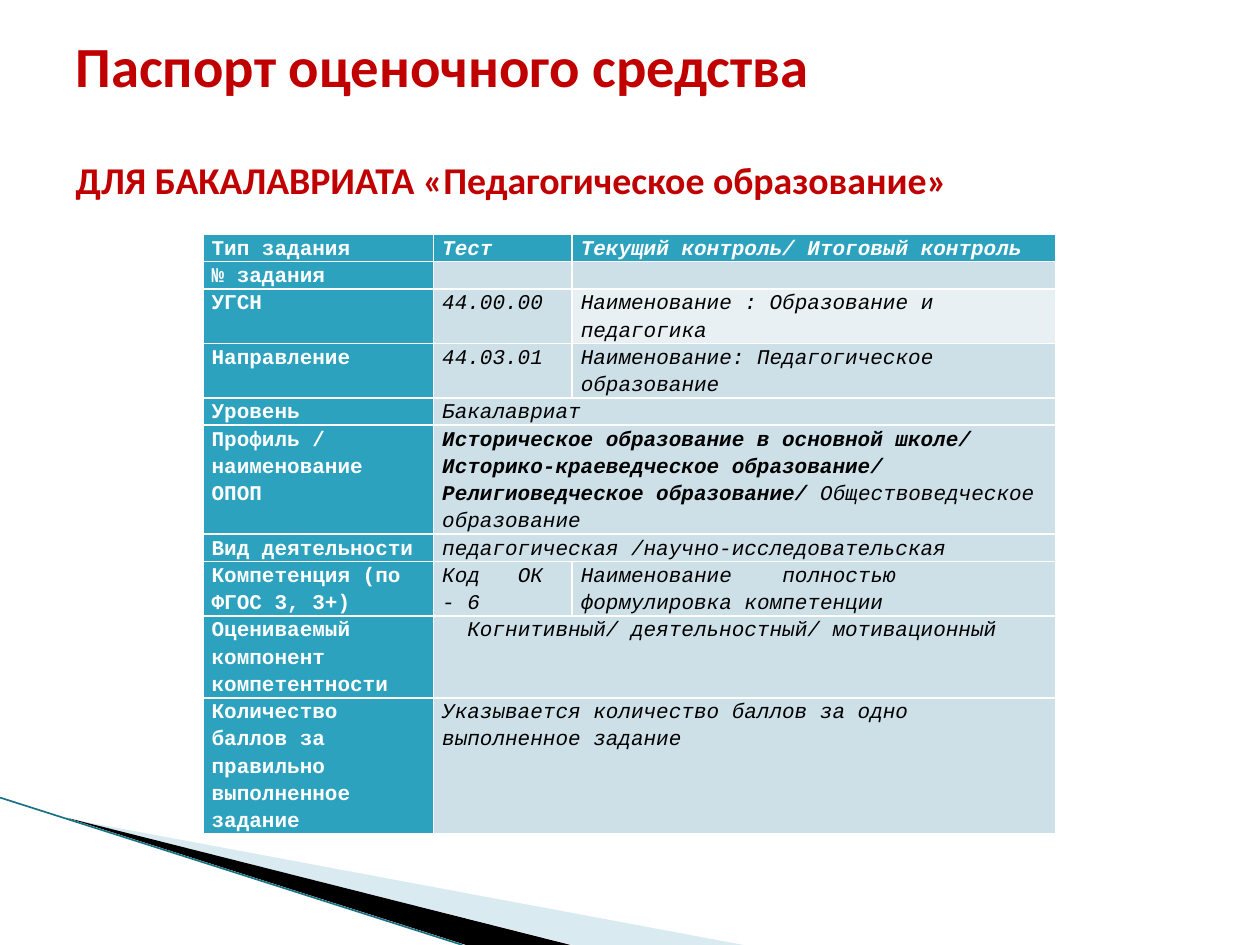
import pptx
import pptx.dml.color
import pptx.enum.shapes
import pptx.enum.text
import pptx.oxml.ns
import pptx.util
from dataclasses import dataclass
from lxml import etree

Inches = pptx.util.Inches
Pt = pptx.util.Pt
qn = pptx.oxml.ns.qn


@dataclass(frozen=True)
class Theme:
    title_font: str = "Calibri"
    table_font: str = "Courier New"
    title_size: float = 32.4
    subtitle_size: float = 21.6
    table_size: float = 12
    red: str = "C00000"
    teal: str = "2DA2BF"
    dark_teal: str = "1A7285"
    cell: str = "CDE0E8"
    light_cell: str = "E8F0F4"
    wedge: str = "A0CBDC"
    white: str = "FFFFFF"
    black: str = "000000"


THEME = Theme()
LINE_HEIGHT = 0.216
COLUMN_WIDTHS = (1.83, 1.1, 3.84)

PASSPORT = (
    (1, "Тип задания", "Тест", "Текущий контроль/ Итоговый контроль"),
    (1, "№ задания", "", ""),
    (2, "УГСН", "44.00.00", "Наименование : Образование и педагогика"),
    (2, "Направление", "44.03.01", "Наименование: Педагогическое образование"),
    (1, "Уровень", "Бакалавриат"),
    (4, "Профиль / наименование ОПОП",
     ("Историческое образование в основной школе/ Историко-краеведческое "
      "образование/ Религиоведческое образование/ ",
      "Обществоведческое образование")),
    (1, "Вид деятельности", "педагогическая /научно-исследовательская"),
    (2, "Компетенция (по ФГОС 3, 3+)", "Код\tОК - 6",
     "Наименование\tполностью формулировка компетенции"),
    (3, "Оцениваемый компонент компетентности",
     "Когнитивный/ деятельностный/ мотивационный"),
    (5, "Количество баллов за правильно выполненное задание",
     "Указывается количество баллов за одно выполненное задание"),
)
COMPETENCE_ROW, COMPONENT_ROW = 7, 8
TAB_STOPS = {1: 0.6, 2: 1.6}
COMPONENT_INDENT = 0.2


def rgb(value):
    return pptx.dml.color.RGBColor.from_string(value)


def style_font(font, name, size, color, bold, italic=False):
    font.name, font.size = name, Pt(size)
    font.bold, font.italic = bold, italic
    font.color.rgb = rgb(color)


def add_wedge(slide, points, color, opacity=100):
    corners = [(Inches(x), Inches(y)) for x, y in points]
    outline = slide.shapes.build_freeform(*corners[0])
    outline.add_line_segments(corners[1:], close=True)
    wedge = outline.convert_to_shape()
    wedge.shadow.inherit = False
    wedge.fill.solid()
    wedge.fill.fore_color.rgb = rgb(color)
    wedge.line.fill.background()
    if opacity < 100:
        tint = wedge.fill._xPr.find(".//" + qn("a:srgbClr"))
        etree.SubElement(tint, qn("a:alpha"), val=str(opacity * 1000))


def add_edge(slide, start, end):
    edge = slide.shapes.add_connector(
        pptx.enum.shapes.MSO_CONNECTOR.STRAIGHT,
        *(Inches(value) for value in start + end))
    edge.line.color.rgb = rgb(THEME.dark_teal)
    edge.line.width = Pt(0.95)
    etree.SubElement(edge._element.spPr, qn("a:effectLst"))


def add_title(slide):
    title = slide.shapes.title
    title.left, title.top = Inches(0.5), Inches(0.3)
    title.width, title.height = Inches(9), Inches(1.25)
    frame = title.text_frame
    frame.auto_size = pptx.enum.text.MSO_AUTO_SIZE.NONE
    frame.vertical_anchor = pptx.enum.text.MSO_ANCHOR.MIDDLE
    heading, programme = frame.paragraphs[0], frame.add_paragraph()
    heading.text = "Паспорт оценочного средства"
    programme.text = "ДЛЯ БАКАЛАВРИАТА «Педагогическое образование»"
    programme.space_before = Pt(33)
    for line, size in ((heading, THEME.title_size),
                       (programme, THEME.subtitle_size)):
        line.alignment = pptx.enum.text.PP_ALIGN.LEFT
        style_font(line.font, THEME.title_font, size, THEME.red, True)


def fill_cell(cell, content, fill, color, bold, italic, tab=None, indent=None):
    cell.fill.solid()
    cell.fill.fore_color.rgb = rgb(fill)
    cell.margin_left = cell.margin_right = Inches(0.07)
    cell.margin_top = cell.margin_bottom = 0
    entry = cell.text_frame.paragraphs[0]
    entry.line_spacing = 1.15
    properties = entry._p.get_or_add_pPr()
    if tab:
        stops = etree.SubElement(properties, qn("a:tabLst"))
        etree.SubElement(stops, qn("a:tab"), pos=str(Inches(tab)), algn="l")
    if indent:
        properties.set("marL", "0")
        properties.set("indent", str(Inches(indent)))
    style_font(entry.font, THEME.table_font, THEME.table_size, color, bold, italic)
    if isinstance(content, tuple):
        emphasis, rest = content
        run = entry.add_run()
        run.text, run.font.bold = emphasis, True
        entry.add_run().text = rest
    elif content:
        entry.add_run().text = content
    else:
        etree.SubElement(entry._p, qn("a:endParaRPr"),
                         sz=str(THEME.table_size * 100))


def add_passport(slide):
    heights = [row[0] * LINE_HEIGHT for row in PASSPORT]
    table = slide.shapes.add_table(
        len(PASSPORT), len(COLUMN_WIDTHS), Inches(1.61), Inches(1.86),
        Inches(sum(COLUMN_WIDTHS)), Inches(sum(heights))).table
    table.horz_banding = False
    for column, width in zip(table.columns, COLUMN_WIDTHS):
        column.width = Inches(width)
    for r, (lines, *contents) in enumerate(PASSPORT):
        table.rows[r].height = Inches(heights[r])
        if len(contents) == 2:
            table.cell(r, 1).merge(table.cell(r, 2))
        for c, content in enumerate(contents):
            accented = r == 0 or c == 0
            pale = THEME.light_cell if (r, c) == (2, 2) else THEME.cell
            fill_cell(
                table.cell(r, c), content,
                fill=THEME.teal if accented else pale,
                color=THEME.white if accented else THEME.black,
                bold=accented, italic=c > 0,
                tab=TAB_STOPS.get(c) if r == COMPETENCE_ROW else None,
                indent=COMPONENT_INDENT if (r, c) == (COMPONENT_ROW, 1) else None)


def main():
    deck = pptx.Presentation()
    deck.slide_width, deck.slide_height = Inches(10), Inches(7.5)
    slide = deck.slides.add_slide(deck.slide_layouts[5])
    add_wedge(slide, [(0.55, 6.5), (5.9, 7.5), (4.55, 7.5)], THEME.wedge, 40)
    add_wedge(slide, [(0.53, 6.49), (4.53, 7.5), (3.7, 7.5)], THEME.black)
    add_edge(slide, (0, 6.33), (3.67, 7.5))
    add_passport(slide)
    add_title(slide)
    deck.save("out.pptx")


if __name__ == "__main__":
    main()
